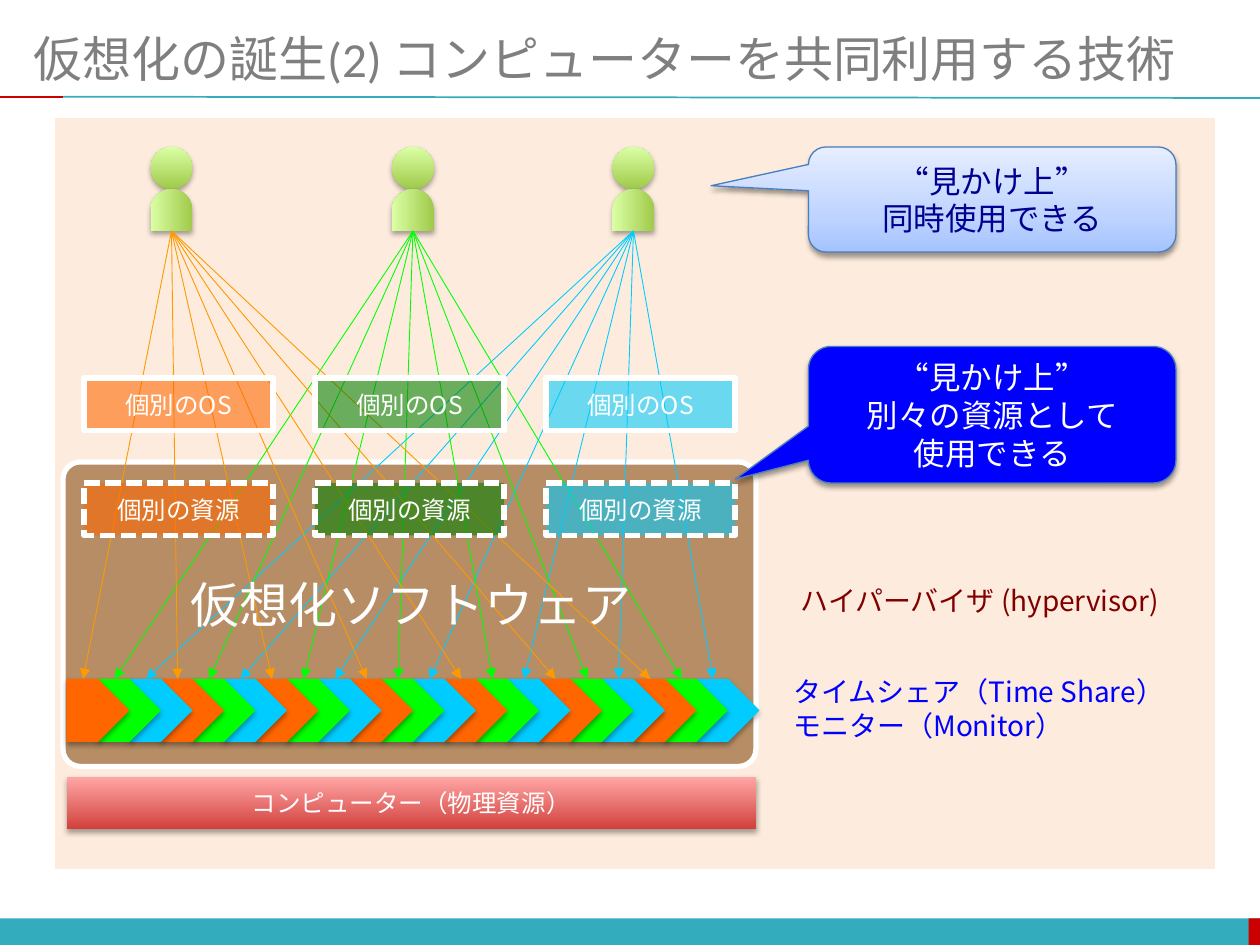
from lxml import etree
from pptx import Presentation
from pptx.dml.color import RGBColor
from pptx.enum.dml import MSO_LINE
from pptx.enum.shapes import MSO_CONNECTOR, MSO_SHAPE
from pptx.enum.text import MSO_ANCHOR, MSO_AUTO_SIZE, PP_ALIGN
from pptx.oxml.ns import qn
from pptx.util import Pt

RECT, ROUND = MSO_SHAPE.RECTANGLE, MSO_SHAPE.ROUNDED_RECTANGLE
OVAL, DELAY = MSO_SHAPE.OVAL, MSO_SHAPE.FLOWCHART_DELAY
PENTAGON, CALLOUT = MSO_SHAPE.PENTAGON, MSO_SHAPE.ROUNDED_RECTANGULAR_CALLOUT
STRAIGHT, DASH = MSO_CONNECTOR.STRAIGHT, MSO_LINE.SQUARE_DOT
LEFT, CENTER, MIDDLE = PP_ALIGN.LEFT, PP_ALIGN.CENTER, MSO_ANCHOR.MIDDLE
FIT = MSO_AUTO_SIZE.SHAPE_TO_FIT_TEXT

WHITE = RGBColor(0xFF, 0xFF, 0xFF)
BLACK = RGBColor(0, 0, 0)
GRAY = RGBColor(0x7F, 0x7F, 0x7F)
TEAL = RGBColor(0x33, 0xAC, 0xBD)
RED = RGBColor(0xCC, 0, 0)
CREAM = RGBColor(0xFD, 0xEA, 0xDA)
BROWN = RGBColor(0x99, 0x66, 0x33)
ORANGE = RGBColor(0xFF, 0x66, 0)
AMBER = RGBColor(0xFF, 0x99, 0)
LIME = RGBColor(0, 0xFF, 0)
GREEN = RGBColor(0, 0x80, 0)
SKY = RGBColor(0, 0xCC, 0xFF)
BLUE = RGBColor(0, 0, 0xFF)
NAVY = RGBColor(0, 0, 0x90)
MAROON = RGBColor(0x80, 0, 0)
EDGE = RGBColor(0x4B, 0x7E, 0xBC)
# Gradients run from bottom to top: (position in %, colour)
USER_GRAD = [(0, RGBColor(0xA0, 0xCA, 0x4A)), (100, RGBColor(0xDA, 0xFF, 0xA5))]
RED_GRAD = [(0, RGBColor(0xD1, 0x40, 0x3C)), (100, RGBColor(0xFF, 0xA6, 0xA5))]
BLUE_GRAD = [(0, RGBColor(0xA4, 0xC4, 0xFF)), (35, RGBColor(0xBF, 0xD4, 0xFF)),
             (100, RGBColor(0xE6, 0xEE, 0xFF))]


def sub(parent, tag, **attrs):
    el = etree.SubElement(parent, qn(tag))
    for name, value in attrs.items():
        el.set(name, str(value))
    return el


class Deck:
    """Holds the style and the current slide; all lengths are in points."""
    font = "Noto Sans CJK JP"

    def __init__(self, width, height):
        self.prs = Presentation()
        self.prs.slide_width, self.prs.slide_height = Pt(width), Pt(height)
        self.s = self.prs.slides.add_slide(self.prs.slide_layouts[5])

    def fill_text(self, tf, text, size, color, align=LEFT, font=None):
        style = {"size": Pt(size), "name": font or self.font}
        for i, line in enumerate(text.split("\n")):
            p = tf.paragraphs[0] if i == 0 else tf.add_paragraph()
            p.alignment = align
            r = p.add_run()
            r.text = line
            for name, value in style.items():
                setattr(r.font, name, value)
            r.font.color.rgb = color
            sub(r.font._element, "a:ea", typeface=self.font)

    def title(self, box, text, size, color, font):
        sp = self.s.shapes.title
        sp.left, sp.top, sp.width, sp.height = map(Pt, box)
        sp.text_frame.vertical_anchor = MIDDLE
        self.fill_text(sp.text_frame, text, size, color, font=font)

    def text(self, box, text, size, color, align=LEFT):
        tf = self.s.shapes.add_textbox(*map(Pt, box)).text_frame
        tf.word_wrap, tf.auto_size = False, FIT
        self.fill_text(tf, text, size, color, align)

    def shape(self, kind, box, fill, alpha=None, line=None, width=3, dash=None,
              shadow=None, adj=(), text=None, size=14, color=WHITE, font=None):
        sp = self.s.shapes.add_shape(kind, *map(Pt, box))
        for i, value in enumerate(adj):
            sp.adjustments[i] = value
        if isinstance(fill, list):
            self.gradient(sp, fill)
        else:
            sp.fill.solid()
            sp.fill.fore_color.rgb = fill
        if alpha:
            clr = sp._element.spPr.find(qn("a:solidFill"))[0]
            sub(clr, "a:alpha", val=alpha * 1000)
        if line is None:
            sp.line.fill.background()
        else:
            sp.line.color.rgb, sp.line.width = line, Pt(width)
            if dash:
                sp.line.dash_style = dash
        sp.shadow.inherit = False
        if shadow:
            effects = sp._element.spPr.find(qn("a:effectLst"))
            shade = sub(effects, "a:outerShdw", blurRad=Pt(3.1), dist=Pt(1.8),
                        dir=5400000, rotWithShape=0)
            clr = sub(shade, "a:srgbClr", val=BLACK)
            sub(clr, "a:alpha", val=shadow * 1000)
        if text:
            sp.text_frame.vertical_anchor = MIDDLE
            self.fill_text(sp.text_frame, text, size, color, CENTER, font)
        return sp

    def gradient(self, sp, stops):
        sp.fill.gradient()
        sp.fill.gradient_angle = 90
        gs_list = sp._element.spPr.find(qn("a:gradFill")).find(qn("a:gsLst"))
        for gs in list(gs_list):
            gs_list.remove(gs)
        for pos, color in stops:
            sub(sub(gs_list, "a:gs", pos=pos * 1000), "a:srgbClr", val=color)

    def line(self, x1, y1, x2, y2, color, width, arrow=False):
        c = self.s.shapes.add_connector(STRAIGHT, *map(Pt, (x1, y1, x2, y2)))
        c.line.color.rgb, c.line.width = color, Pt(width)
        if arrow:
            sub(c._element.spPr.find(qn("a:ln")), "a:tailEnd", type="triangle")
        sub(c._element.spPr, "a:effectLst")

    def user(self, x, y, d):
        head = self.shape(OVAL, (x, y, d, d), USER_GRAD, shadow=35)
        body = self.shape(DELAY, (x, y + d, d, d), USER_GRAD, shadow=35)
        body.rotation = 270
        self.s.shapes.add_group_shape([head, body])


def main():
    d = Deck(720, 540)

    # Frame and title
    d.shape(RECT, (0, 524.8, 720, 15.2), TEAL)
    d.shape(RECT, (713.5, 524.8, 6.5, 15.2), RED)
    d.line(36, 55.3, 720, 56, TEAL, 1)
    d.line(0, 55.3, 36, 55.3, RED, 1)
    d.title((12, 12, 708, 42), "仮想化の誕生(2) コンピューターを共同利用する技術",
            28, GRAY, "Calibri")

    # Background panel and virtualization layer
    d.shape(RECT, (30, 66, 666, 432), CREAM, alpha=90, line=WHITE)
    d.shape(ROUND, (36, 264, 396, 174), BROWN, alpha=70, line=WHITE, adj=[0.057])

    # Time slices, the first one on top
    slices, step, slice_left, slice_top = 21, 18, 38, 388
    for i in reversed(range(slices)):
        d.shape(PENTAGON, (slice_left + step * i, slice_top, 36, 36),
                (ORANGE, LIME, SKY)[i % 3], shadow=35)

    # Users, and arrows from each to its slices
    user_x, user_top, user_size = (98, 236, 362), 84, 24
    for x in user_x:
        d.user(x - user_size / 2, user_top, user_size)
    for i in range(slices):
        d.line(user_x[i % 3], user_top + 2 * user_size,
               slice_left + 9.5 + step * i, slice_top,
               (AMBER, LIME, SKY)[i % 3], 0.5, arrow=True)

    # Physical computer
    d.shape(RECT, (38, 444, 394, 30), RED_GRAD, shadow=35,
            text="コンピューター（物理資源）", font="Arial")

    # Separate resources and systems
    for top, label, dash in ((276, "個別の資源", DASH), (216, "個別のOS", None)):
        for i, color in enumerate((ORANGE, GREEN, SKY)):
            d.shape(RECT, (48 + 132 * i, top, 108, 30), color, alpha=58,
                    line=WHITE, dash=dash, text=label)

    # Callouts
    for top, height, fill, adj, color, text in (
            (84, 60, BLUE_GRAD, (-0.765, -0.131), NAVY,
             "“見かけ上”\n同時使用できる"),
            (198, 78, BLUE, (-0.699, 0.472), WHITE,
             "“見かけ上”\n別々の資源として\n使用できる")):
        d.shape(CALLOUT, (462, top, 210, height), fill, line=EDGE, width=0.75,
                shadow=38, adj=adj, text=text, size=18, color=color)

    # Labels
    d.text((102, 324.5, 269, 41), "仮想化ソフトウェア", 28, WHITE)
    d.text((444, 330, 232, 26.5), "ハイパーバイザ (hypervisor)", 16, MAROON, CENTER)
    d.text((446.5, 382, 238, 50), "タイムシェア（Time Share）\nモニター（Monitor）",
           16, BLUE)

    d.prs.save("out.pptx")


if __name__ == "__main__":
    main()
